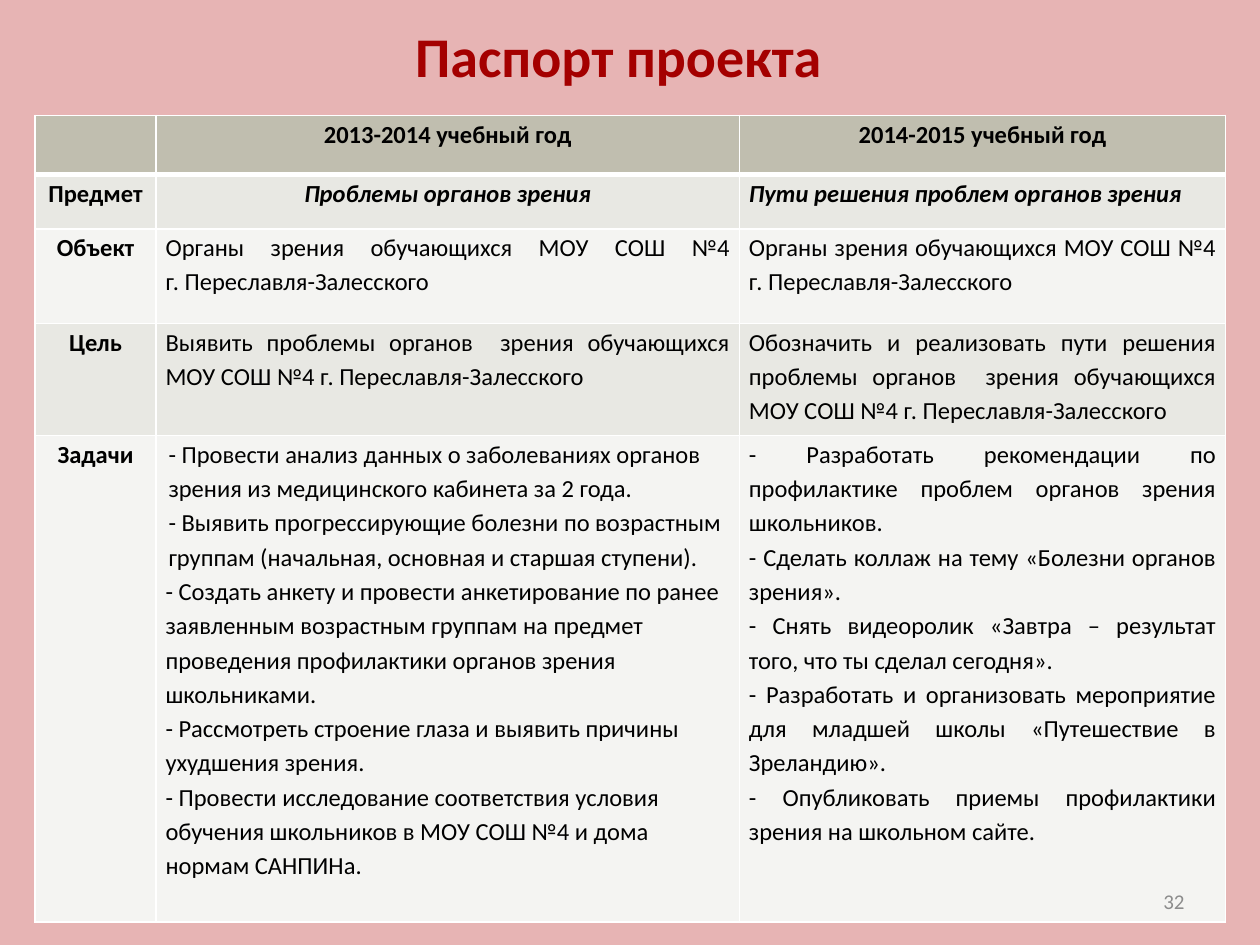
from dataclasses import dataclass

from lxml import etree
from pptx import Presentation
from pptx.dml.color import RGBColor
from pptx.enum import text
from pptx.oxml import ns
from pptx.util import Pt

LEFT, CENTER = text.PP_ALIGN.LEFT, text.PP_ALIGN.CENTER
RIGHT, JUSTIFY = text.PP_ALIGN.RIGHT, text.PP_ALIGN.JUSTIFY


@dataclass(frozen=True)
class Theme:
    font: str = "Calibri"
    background: str = "E7B4B4"
    title: str = "A40000"
    body: str = "000000"
    page_number: str = "8C8C8C"
    header_fill: str = "C0BEAF"
    band_fills: tuple[str, str] = ("E8E8E3", "F4F4F2")
    border: str = "FFFFFF"
    title_size: float = 32
    body_size: float = 14
    number_size: float = 12
    line_spacing: float = 1.15
    thin: float = 1
    thick: float = 3


@dataclass(frozen=True)
class Entry:
    paragraphs: tuple[str, ...]
    align: text.PP_ALIGN = JUSTIFY
    bold: bool = False
    italic: bool = False
    indented: int = 0  # how many leading paragraphs are indented


THEME = Theme()
COLUMN_WIDTHS = (69.2, 333.4, 277.8)
ROW_HEIGHTS = (33.8, 31, 54, 64.2, 277.8)


def heading(label: str) -> Entry:
    return Entry((label,), CENTER, bold=True)


PASSPORT = (
    (
        Entry(()),
        heading("2013-2014 учебный год"),
        heading("2014-2015 учебный год"),
    ),
    (
        heading("Предмет"),
        Entry(("Проблемы органов зрения",), CENTER, bold=True, italic=True),
        Entry(("Пути решения проблем органов зрения",), LEFT, bold=True, italic=True),
    ),
    (
        heading("Объект"),
        Entry(("Органы зрения обучающихся МОУ СОШ №4\nг. Переславля-Залесского",)),
        Entry(("Органы зрения обучающихся МОУ СОШ №4 г. Переславля-Залесского",)),
    ),
    (
        heading("Цель"),
        Entry(("Выявить проблемы органов  зрения обучающихся МОУ СОШ №4 "
               "г. Переславля-Залесского",)),
        Entry(("Обозначить и реализовать пути решения проблемы органов  зрения "
               "обучающихся МОУ СОШ №4 г. Переславля-Залесского",)),
    ),
    (
        heading("Задачи"),
        Entry((
            "- Провести анализ данных о заболеваниях органов зрения из "
            "медицинского кабинета за 2 года.",
            "- Выявить прогрессирующие болезни по возрастным группам "
            "(начальная, основная и старшая ступени).",
            "- Создать анкету и провести анкетирование по ранее заявленным "
            "возрастным группам на предмет проведения профилактики органов "
            "зрения школьниками.",
            "- Рассмотреть строение глаза и выявить причины ухудшения зрения.",
            "- Провести исследование соответствия условия обучения школьников "
            "в МОУ СОШ №4 и дома нормам САНПИНа.",
        ), LEFT, indented=2),
        Entry((
            "- Разработать рекомендации по профилактике проблем органов зрения "
            "школьников.",
            "- Сделать коллаж на тему «Болезни органов зрения».",
            "- Снять видеоролик «Завтра – результат того, что ты сделал сегодня».",
            "- Разработать и организовать мероприятие для младшей школы "
            "«Путешествие в Зреландию».",
            "- Опубликовать приемы профилактики зрения на школьном сайте.",
        )),
    ),
)


def format_paragraph(paragraph, align: text.PP_ALIGN, size: float, color: str,
                     bold: bool = False, italic: bool = False) -> None:
    paragraph.alignment = align
    for run in paragraph.runs:
        font = run.font
        font.name, font.size = THEME.font, Pt(size)
        font.bold, font.italic = bold, italic
        font.color.rgb = RGBColor.from_string(color)


def add_borders(cell, top: float, bottom: float) -> None:
    """Draw all four cell edges; must run before the cell is filled."""
    properties = cell._tc.get_or_add_tcPr()
    widths = {"L": THEME.thin, "R": THEME.thin, "T": top, "B": bottom}
    for side, width in widths.items():
        line = etree.SubElement(properties, ns.qn(f"a:ln{side}"), w=str(Pt(width)))
        fill = etree.SubElement(line, ns.qn("a:solidFill"))
        etree.SubElement(fill, ns.qn("a:srgbClr"), val=THEME.border)


def fill_cell(cell, entry: Entry, fill: str) -> None:
    cell.margin_left = cell.margin_right = Pt(5.4)
    cell.margin_top = cell.margin_bottom = 0
    cell.fill.solid()
    cell.fill.fore_color.rgb = RGBColor.from_string(fill)
    frame = cell.text_frame
    for index, wording in enumerate(entry.paragraphs):
        paragraph = frame.add_paragraph() if index else frame.paragraphs[0]
        paragraph.text = wording
        paragraph.line_spacing = THEME.line_spacing
        format_paragraph(paragraph, entry.align, THEME.body_size, THEME.body,
                         entry.bold, entry.italic)
        if index < entry.indented:
            paragraph._p.get_or_add_pPr().set("marL", str(Pt(1.7)))


def add_passport(slide) -> None:
    passport = slide.shapes.add_table(
        len(ROW_HEIGHTS), len(COLUMN_WIDTHS), Pt(20), Pt(66),
        Pt(sum(COLUMN_WIDTHS)), Pt(sum(ROW_HEIGHTS))).table
    passport.horz_banding = False
    for column, width in zip(passport.columns, COLUMN_WIDTHS):
        column.width = Pt(width)
    for index, (row, height, entries) in enumerate(
            zip(passport.rows, ROW_HEIGHTS, PASSPORT)):
        row.height = Pt(height)
        fill = THEME.band_fills[(index - 1) % 2] if index else THEME.header_fill
        top = THEME.thick if index == 1 else THEME.thin
        bottom = THEME.thick if index == 0 else THEME.thin
        for cell, entry in zip(row.cells, entries):
            add_borders(cell, top, bottom)
            fill_cell(cell, entry, fill)


def add_title(slide) -> None:
    title = slide.shapes.title
    title.left, title.top, title.width, title.height = Pt(29.5), Pt(3.6), Pt(648), Pt(55.4)
    frame = title.text_frame
    frame.text = "Паспорт проекта"
    frame.vertical_anchor = text.MSO_ANCHOR.MIDDLE
    format_paragraph(frame.paragraphs[0], CENTER, THEME.title_size, THEME.title, bold=True)


def add_page_number(slide) -> None:
    frame = slide.shapes.add_textbox(Pt(516), Pt(500.5), Pt(168), Pt(28.8)).text_frame
    frame.word_wrap = True
    frame.vertical_anchor = text.MSO_ANCHOR.MIDDLE
    frame.text = "32"
    format_paragraph(frame.paragraphs[0], RIGHT, THEME.number_size, THEME.page_number)


def main() -> None:
    deck = Presentation()
    deck.slide_width, deck.slide_height = Pt(720), Pt(540)
    slide = deck.slides.add_slide(deck.slide_layouts.get_by_name("Title Only"))
    slide.background.fill.solid()
    slide.background.fill.fore_color.rgb = RGBColor.from_string(THEME.background)
    add_title(slide)
    add_passport(slide)
    add_page_number(slide)
    deck.save("out.pptx")


if __name__ == "__main__":
    main()
